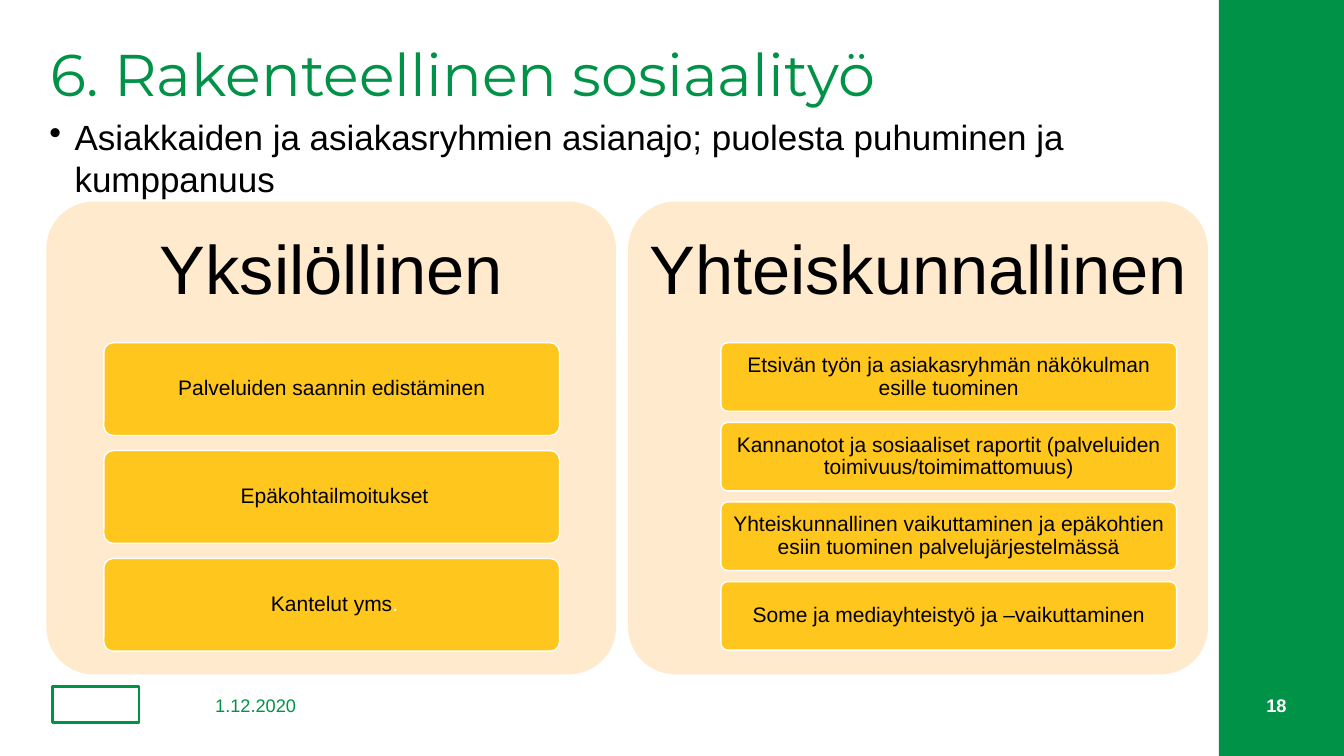
"""Build the slide on structural social work with two panels of cards."""
from lxml import etree
from pptx import Presentation, util as u
from pptx.dml.color import RGBColor
from pptx.enum import shapes, text
from pptx.oxml import ns

PX = 9144
GREEN = RGBColor(0x00, 0x92, 0x46)
CREAM = RGBColor(0xFF, 0xEA, 0xCD)
YELLOW = RGBColor(0xFF, 0xC6, 0x1E)
BLACK = RGBColor(0, 0, 0)
WHITE = RGBColor(0xFF, 0xFF, 0xFF)
LEFT, CENTER, RIGHT = text.PP_ALIGN.LEFT, text.PP_ALIGN.CENTER, text.PP_ALIGN.RIGHT
TOP, MIDDLE = text.MSO_ANCHOR.TOP, text.MSO_ANCHOR.MIDDLE
RECT, ROUNDED = shapes.MSO_SHAPE.RECTANGLE, shapes.MSO_SHAPE.ROUNDED_RECTANGLE

deck = Presentation()
deck.slide_width, deck.slide_height = 1333 * PX, 750 * PX
page = deck.slides.add_slide(deck.slide_layouts[6])


def add_block(kind, bounds, fill, line=None, width=1):
    block = page.shapes.add_shape(kind, *[n * PX for n in bounds])
    block.shadow.inherit = False
    if fill is None:
        block.fill.background()
    else:
        block.fill.solid()
        block.fill.fore_color.rgb = fill
    if line is None:
        block.line.fill.background()
    else:
        block.line.color.rgb = line
        block.line.width = u.Pt(width)
    if kind == ROUNDED:
        block.adjustments[0] = 0.1
    return block


def write(box, words, size, color, align=LEFT, anchor=TOP, font="Arial", spacing=1.0, inset=0):
    frame = box.text_frame
    frame.word_wrap = True
    frame.vertical_anchor = anchor
    frame.margin_left = frame.margin_right = inset * PX
    frame.margin_top = frame.margin_bottom = inset * PX
    para = frame.paragraphs[0]
    para.alignment = align
    para.line_spacing = spacing
    para.font.name, para.font.size = font, u.Pt(size)
    para.font.color.rgb = color
    para.add_run().text = words
    return para


add_block(RECT, (52, 681, 86, 36), None, GREEN, 2)
add_block(RECT, (1209, 0, 124, 750), GREEN)

title, body, date, number = [
    page.shapes.add_textbox(*[n * PX for n in bounds])
    for bounds in [(50, 45, 1229, 86), (49, 115, 1201, 85), (182, 686, 143, 28), (1141, 686, 135, 28)]
]
write(title, "6. Rakenteellinen sosiaalityö", 42, GREEN, font="Montserrat", spacing=0.9)
bullet = write(body, "Asiakkaiden ja asiakasryhmien asianajo; puolesta puhuminen ja kumppanuus", 25, BLACK)
props = bullet._p.get_or_add_pPr()
props.set("marL", str(25 * PX))
props.set("indent", str(-25 * PX))
mark = etree.Element(ns.qn("a:buChar"), char="•")
props.insert_element_before(mark, "a:tabLst", "a:defRPr", "a:extLst")
write(date, "1.12.2020", 13, GREEN, CENTER, MIDDLE)
write(number, "18", 13, WHITE, RIGHT, MIDDLE).font.bold = True

PANELS = [
    (46, 565, 103, 92, 15, "Yksilöllinen", [
        "Palveluiden saannin edistäminen",
        " Epäkohtailmoitukset",
        " Kantelut yms",
    ]),
    (623, 575, 715, 68, 11, "Yhteiskunnallinen", [
        "Etsivän työn ja asiakasryhmän näkökulman esille tuominen",
        "Kannanotot ja sosiaaliset raportit (palveluiden toimivuus/toimimattomuus)",
        "Yhteiskunnallinen vaikuttaminen ja epäkohtien esiin tuominen palvelujärjestelmässä",
        "Some ja mediayhteistyö ja –vaikuttaminen",
    ]),
]
for left, width, card_left, card_height, gap, heading, cards in PANELS:
    add_block(ROUNDED, (left, 200, width, 469), CREAM)
    head = page.shapes.add_textbox(left * PX, 200 * PX, width * PX, 141 * PX)
    write(head, heading, 49, BLACK, CENTER, MIDDLE, spacing=0.9, inset=10)
    for row, words in enumerate(cards):
        top = 340 + row * (card_height + gap)
        card = add_block(ROUNDED, (card_left, top, 452, card_height), YELLOW, WHITE)
        para = write(card, words, 15, BLACK, CENTER, MIDDLE, spacing=0.9, inset=4)
        if words.endswith("yms"):
            span = para.add_run()
            span.text = "."
            span.font.color.rgb = WHITE

deck.save("out.pptx")
